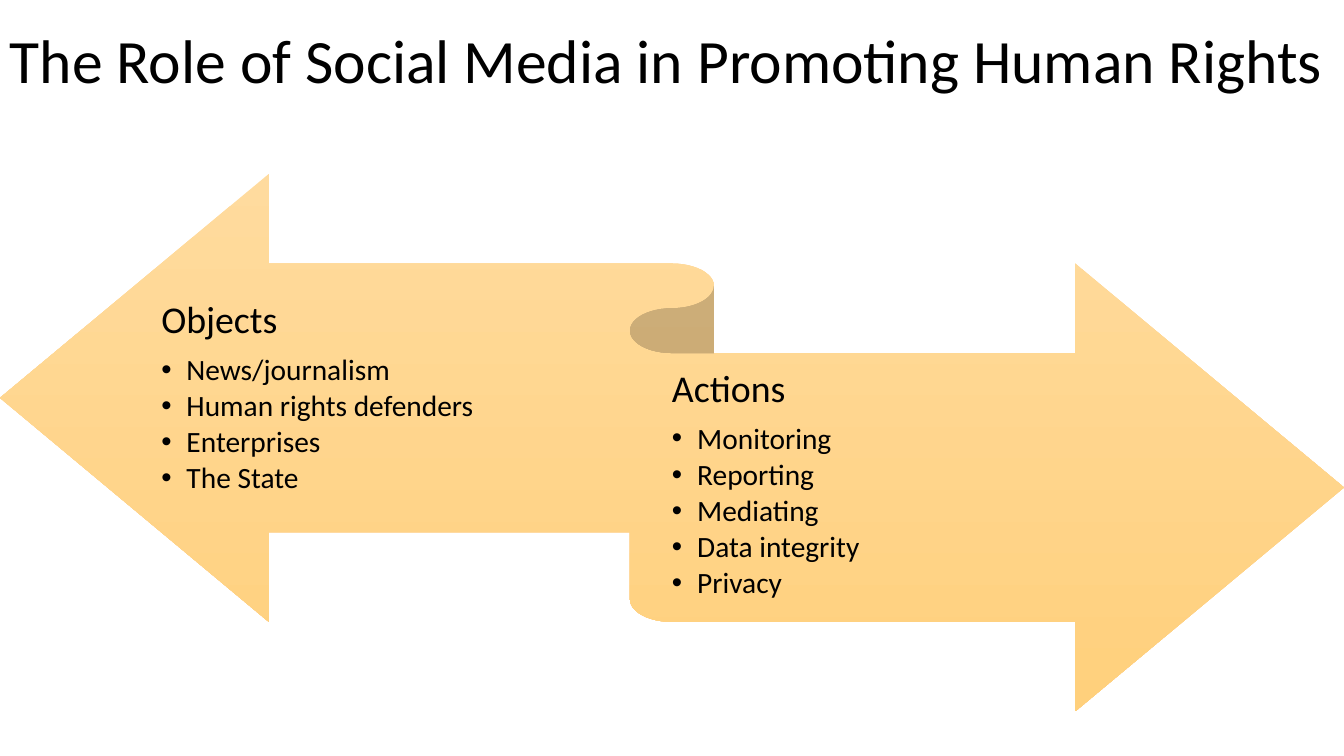
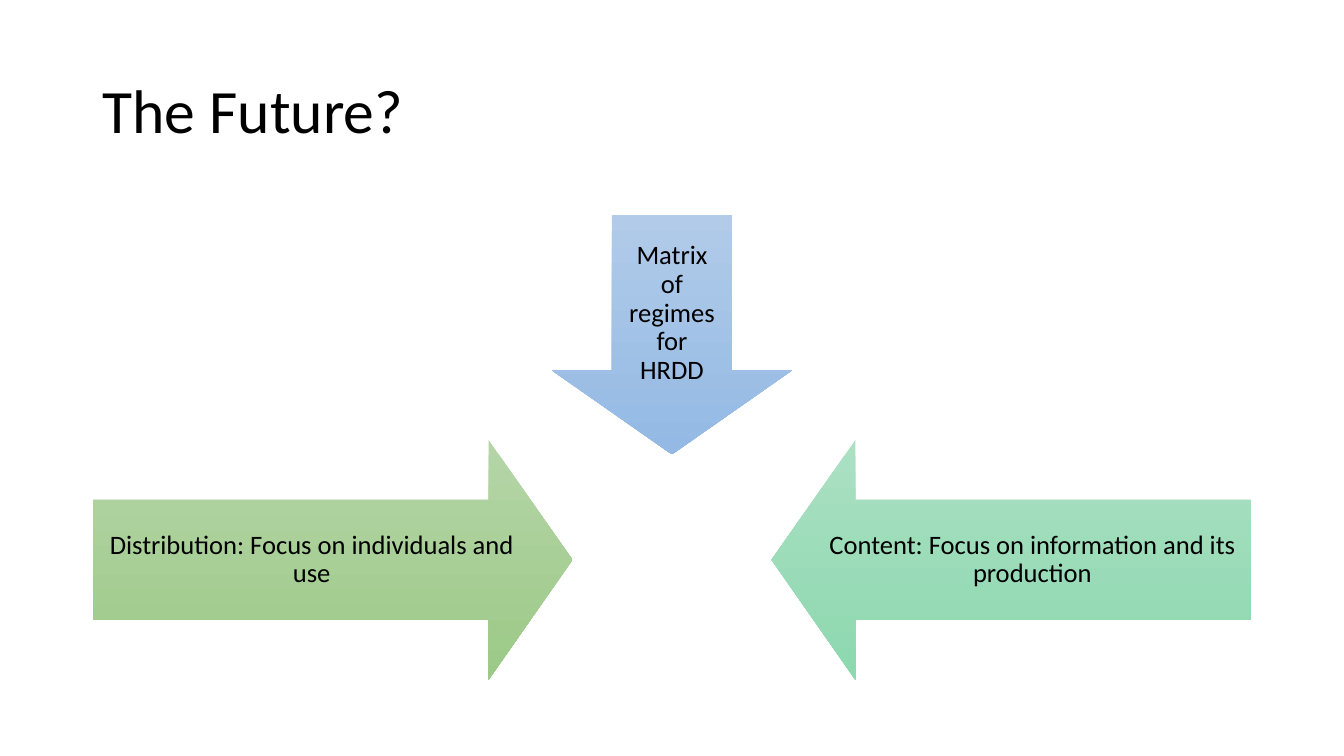
from dataclasses import dataclass

from lxml.etree import SubElement
from pptx import Presentation
from pptx.dml.color import RGBColor
from pptx.enum.shapes import MSO_SHAPE as Preset
from pptx.enum.text import MSO_ANCHOR as Anchor, PP_ALIGN as Align
from pptx.oxml.ns import qn
from pptx.util import Inches, Pt


@dataclass(frozen=True)
class Theme:
    width: float = Inches(13.33)
    height: float = Inches(7.5)
    font: str = "Calibri"
    text: str = "000000"
    title_size: int = 44
    heading_size: int = 27
    bullet_size: int = 21
    arrow_size: int = 19
    line_spacing: float = 0.9
    heading_gap: int = 35
    bullet_gap: int = 15
    indent: float = Inches(0.25)
    orange: tuple = ("FFDB9E", "FFD07C")
    blue: tuple = ("B1CBE9", "93B9E4")
    mint: tuple = ("ABE0C3", "8CD8AF")
    green: tuple = ("B5D5A7", "9CC987")


THEME = Theme()
MARGIN = 6.9
ARROW_WIDTH = 17.85
ARROW_HEIGHT = 31.7
ARROW_LENGTH = 2 * ARROW_WIDTH
ARROW_ADJUSTMENTS = (0.5, 0.35)


def apply_format(target, values):
    for name, value in values.items():
        setattr(target, name, value)


def frame(left, top, width, height):
    sizes = (THEME.width, THEME.height) * 2
    return [round(size * share / 100) for size, share in zip(sizes, (left, top, width, height))]


def format_text_frame(text_frame, insets):
    sides = ("margin_left", "margin_top", "margin_right", "margin_bottom")
    apply_format(text_frame, {
        "word_wrap": True,
        "vertical_anchor": Anchor.MIDDLE,
        **{side: Inches(inset) for side, inset in zip(sides, insets)},
    })


def write_paragraph(paragraph, text, size, gap=0, align=Align.LEFT, bullet=False):
    apply_format(paragraph, {"alignment": align, "line_spacing": THEME.line_spacing})
    properties = paragraph._p.get_or_add_pPr()
    space_after = SubElement(properties, qn("a:spcAft"))
    SubElement(space_after, qn("a:spcPct"), val=str(gap * 1000))
    if bullet:
        properties.set("marL", str(THEME.indent))
        properties.set("indent", str(-THEME.indent))
        SubElement(properties, qn("a:buFont"), typeface="Arial")
        SubElement(properties, qn("a:buChar"), char="•")
    run = paragraph.add_run()
    run.text = text
    apply_format(run.font, {"name": THEME.font, "size": Pt(size)})
    run.font.color.rgb = RGBColor.from_string(THEME.text)


def add_title(slide, text, place):
    text_frame = slide.shapes.add_textbox(*frame(*place)).text_frame
    format_text_frame(text_frame, (0.1, 0.05, 0.1, 0.05))
    write_paragraph(text_frame.paragraphs[0], text, THEME.title_size)


def add_gradient_shape(slide, preset, place, colors):
    shape = slide.shapes.add_shape(preset, *frame(*place))
    shape.shadow.inherit = False
    shape.line.fill.background()
    shape.fill.gradient()
    shape.fill.gradient_angle = 270
    for stop, color in zip(shape.fill.gradient_stops, colors):
        stop.color.rgb = RGBColor.from_string(color)
    return shape


def add_arrow(slide, preset, place, colors, text):
    arrow = add_gradient_shape(slide, preset, place, colors)
    for index, value in enumerate(ARROW_ADJUSTMENTS):
        arrow.adjustments[index] = value
    format_text_frame(arrow.text_frame, (0.15,) * 4)
    write_paragraph(arrow.text_frame.paragraphs[0], text, THEME.arrow_size,
                    THEME.heading_gap, Align.CENTER)


def add_list(slide, place, heading, items):
    text_frame = slide.shapes.add_textbox(*frame(*place)).text_frame
    format_text_frame(text_frame, (0, 0.1, 0, 0.11))
    write_paragraph(text_frame.paragraphs[0], heading, THEME.heading_size, THEME.heading_gap)
    for item in items:
        write_paragraph(text_frame.add_paragraph(), item, THEME.bullet_size,
                        THEME.bullet_gap, bullet=True)


def build_role_slide(slide):
    add_title(slide, "The Role of Social Media in Promoting Human Rights", (0, 0, 100, 16.93))
    add_gradient_shape(slide, Preset.LEFT_RIGHT_RIBBON, (0, 23, 100, 71.1), THEME.orange)
    add_list(slide, (12, 35.33, 33, 34.8), "Objects",
             ("News/journalism", "Human rights defenders", "Enterprises", "The State"))
    add_list(slide, (50, 46.8, 39, 34.8), "Actions",
             ("Monitoring", "Reporting", "Mediating", "Data integrity", "Privacy"))


def build_future_slide(slide):
    side_top = 58.2
    add_title(slide, "The Future?", (MARGIN, 5.33, 100 - 2 * MARGIN, 19.33))
    add_arrow(slide, Preset.DOWN_ARROW,
              (50 - ARROW_WIDTH / 2, 28.4, ARROW_WIDTH, ARROW_HEIGHT),
              THEME.blue, "Matrix of regimes for HRDD")
    add_arrow(slide, Preset.LEFT_ARROW,
              (100 - MARGIN - ARROW_LENGTH, side_top, ARROW_LENGTH, ARROW_HEIGHT),
              THEME.mint, "Content: Focus on information and its production")
    add_arrow(slide, Preset.RIGHT_ARROW,
              (MARGIN, side_top, ARROW_LENGTH, ARROW_HEIGHT),
              THEME.green, "Distribution: Focus on individuals and use")


def main():
    presentation = Presentation()
    apply_format(presentation, {"slide_width": THEME.width, "slide_height": THEME.height})
    blank = presentation.slide_layouts[6]
    for build in (build_role_slide, build_future_slide):
        build(presentation.slides.add_slide(blank))
    presentation.save("out.pptx")


if __name__ == "__main__":
    main()
